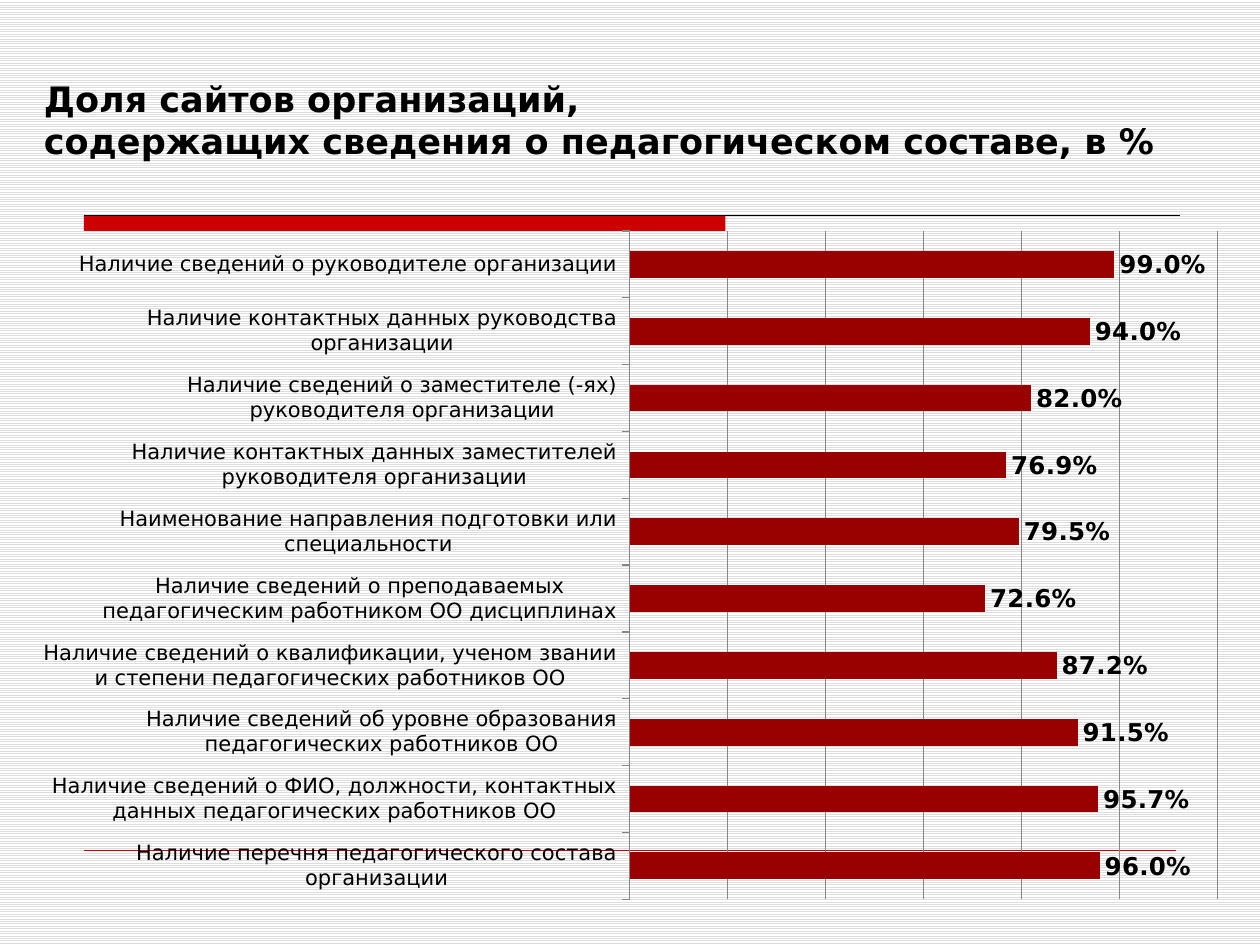
"""Build a slide with a bar chart of how many sites list facts on their teaching staff."""
import lxml.etree
import pptx
import pptx.chart.data
import pptx.dml.color
import pptx.enum.chart
import pptx.enum.dml
import pptx.enum.shapes
import pptx.enum.text
import pptx.oxml
import pptx.oxml.ns
import pptx.util

Pt = pptx.util.Pt
RGBColor = pptx.dml.color.RGBColor
BLACK = RGBColor(0x00, 0x00, 0x00)
WHITE = RGBColor(0xFF, 0xFF, 0xFF)
STRIPE = RGBColor(0xDD, 0xDD, 0xDD)
RED = RGBColor(0xCC, 0x00, 0x00)
DARK = RGBColor(0x99, 0x00, 0x00)
GREY = RGBColor(0x86, 0x86, 0x86)
FONT = "DejaVu Sans"
TITLE = "Доля сайтов организаций,\nсодержащих сведения о педагогическом составе, в %"
ROWS = [
    ("Наличие перечня педагогического состава организации", 0.96),
    ("Наличие сведений о ФИО, должности, контактных данных педагогических работников ОО", 0.957),
    ("Наличие сведений об уровне образования педагогических работников ОО", 0.915),
    ("Наличие сведений о квалификации, ученом звании и степени педагогических работников ОО", 0.872),
    ("Наличие сведений о преподаваемых педагогическим работником ОО дисциплинах", 0.726),
    ("Наименование направления подготовки или специальности", 0.795),
    ("Наличие контактных данных заместителей руководителя организации", 0.769),
    ("Наличие сведений о заместителе (-ях) руководителя организации", 0.82),
    ("Наличие контактных данных руководства организации", 0.94),
    ("Наличие сведений о руководителе организации", 0.99),
]


def set_font(font, size, bold=False, color=BLACK):
    font.name, font.size, font.bold = FONT, Pt(size), bold
    font.color.rgb = color


def set_back(slide):
    fill = slide.background.fill
    fill.patterned()
    fill.pattern = pptx.enum.dml.MSO_PATTERN.LIGHT_HORIZONTAL
    fill.fore_color.rgb, fill.back_color.rgb = STRIPE, WHITE


def add_text(slide, text, left, top, width, height, **style):
    frame = slide.shapes.add_textbox(Pt(left), Pt(top), Pt(width), Pt(height)).text_frame
    frame.word_wrap = True
    frame.vertical_anchor = pptx.enum.text.MSO_ANCHOR.BOTTOM
    para = frame.paragraphs[0]
    para.text = text
    for run in para.runs:
        set_font(run.font, **style)


def add_band(slide, left, top, width, height):
    kind = pptx.enum.shapes.MSO_SHAPE.RECTANGLE
    band = slide.shapes.add_shape(kind, Pt(left), Pt(top), Pt(width), Pt(height))
    band.shadow.inherit = False
    band.fill.solid()
    band.fill.fore_color.rgb = RED
    band.line.fill.background()


def add_rule(slide, left, right, top, color, width):
    kind = pptx.enum.shapes.MSO_CONNECTOR.STRAIGHT
    rule = slide.shapes.add_connector(kind, Pt(left), Pt(top), Pt(right), Pt(top))
    rule.line.color.rgb, rule.line.width = color, Pt(width)
    lxml.etree.SubElement(rule._element.spPr, pptx.oxml.ns.qn("a:effectLst"))


def set_plot(chart, **box):
    parts = "".join(f'<c:{key}Mode val="edge"/>' for key in "xy")
    parts += "".join(f'<c:{key} val="{val}"/>' for key, val in box.items())
    area = chart._chartSpace.chart.plotArea
    for old in area.findall(pptx.oxml.ns.qn("c:layout")):
        area.remove(old)
    area.insert(0, pptx.oxml.parse_xml(
        f'<c:layout {pptx.oxml.ns.nsdecls("c")}><c:manualLayout>'
        f'<c:layoutTarget val="inner"/>{parts}</c:manualLayout></c:layout>'))


def set_axes(chart):
    marks = pptx.enum.chart.XL_TICK_MARK
    cats, vals = chart.category_axis, chart.value_axis
    cats.major_tick_mark = marks.OUTSIDE
    cats.format.line.color.rgb = GREY
    set_font(cats.tick_labels.font, 12)
    vals.minimum_scale, vals.maximum_scale, vals.major_unit = 0, 1.2, 0.2
    vals.has_major_gridlines = True
    vals.major_gridlines.format.line.color.rgb = GREY
    vals.tick_labels.number_format = "0.0%"
    vals.tick_labels.number_format_is_linked = False
    vals.visible = False


def set_bars(plot):
    plot.gap_width, plot.vary_by_categories = 150, False
    fill = plot.series[0].format.fill
    fill.solid()
    fill.fore_color.rgb = DARK
    plot.has_data_labels = True
    tags = plot.data_labels
    tags.show_value = True
    tags.number_format, tags.number_format_is_linked = "0.0%", False
    tags.position = pptx.enum.chart.XL_LABEL_POSITION.OUTSIDE_END
    set_font(tags.font, 14, bold=True)


def add_chart(slide, left, top, width, height):
    data = pptx.chart.data.CategoryChartData(number_format="0.0%")
    data.categories = [name for name, _ in ROWS]
    data.add_series("Series 1", [share for _, share in ROWS])
    kind = pptx.enum.chart.XL_CHART_TYPE.BAR_CLUSTERED
    chart = slide.shapes.add_chart(kind, Pt(left), Pt(top), Pt(width), Pt(height), data).chart
    chart.has_legend = chart.has_title = False
    set_font(chart.font, 10)
    set_axes(chart)
    set_bars(chart.plots[0])
    set_plot(chart, x=0.5, y=0.03, w=0.5, h=0.95)


def main():
    deck = pptx.Presentation()
    deck.slide_width, deck.slide_height = Pt(720), Pt(540)
    slide = deck.slides.add_slide(deck.slide_layouts[6])
    set_back(slide)
    add_band(slide, 48, 123, 366.5, 9)
    add_rule(slide, 48, 674.5, 123, BLACK, 0.75)
    add_rule(slide, 48, 672, 486, RED, 0.25)
    add_text(slide, TITLE, 18, 24, 684, 72, size=20, bold=True)
    add_chart(slide, 24, 120, 672, 402)
    deck.save("out.pptx")


if __name__ == "__main__":
    main()
